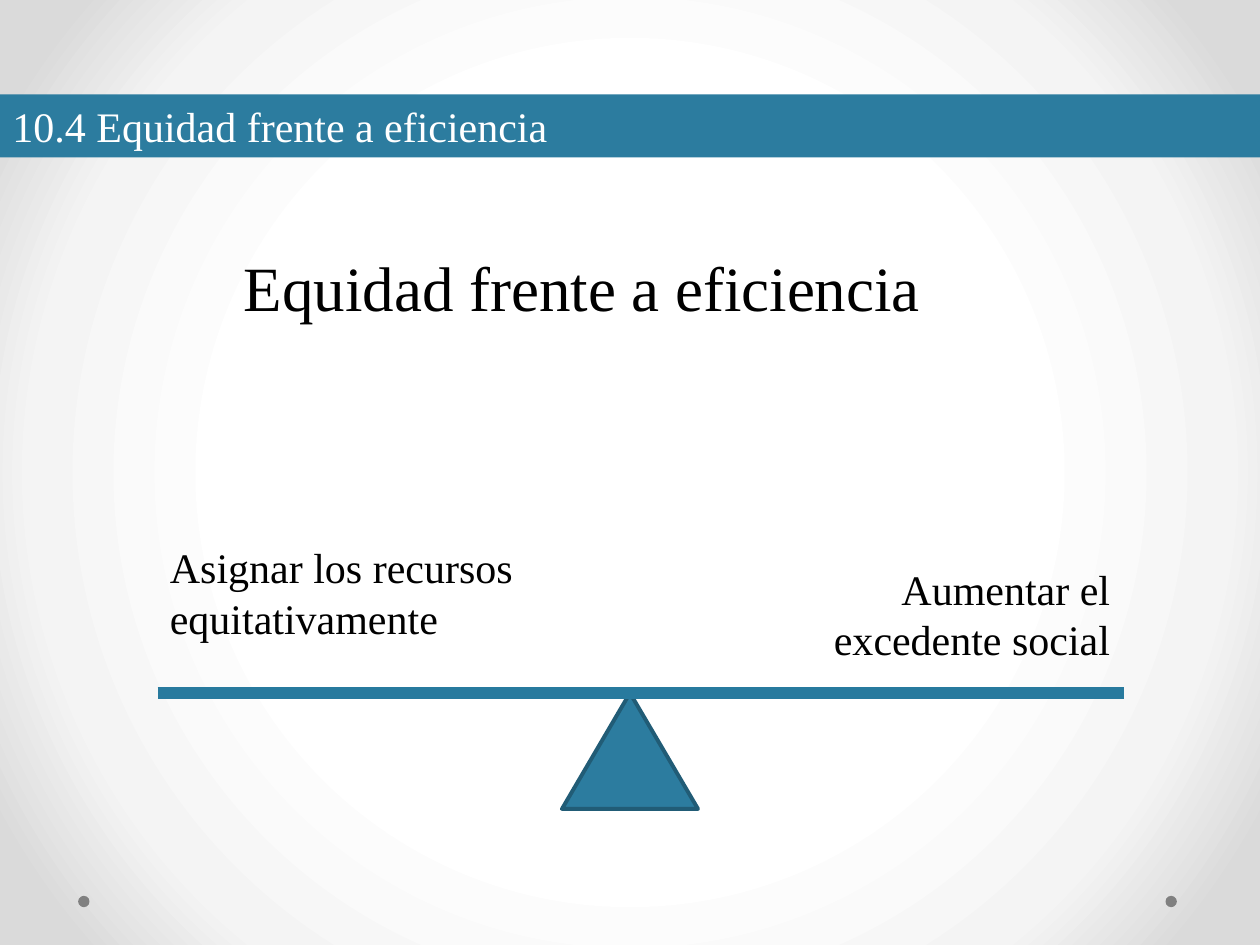
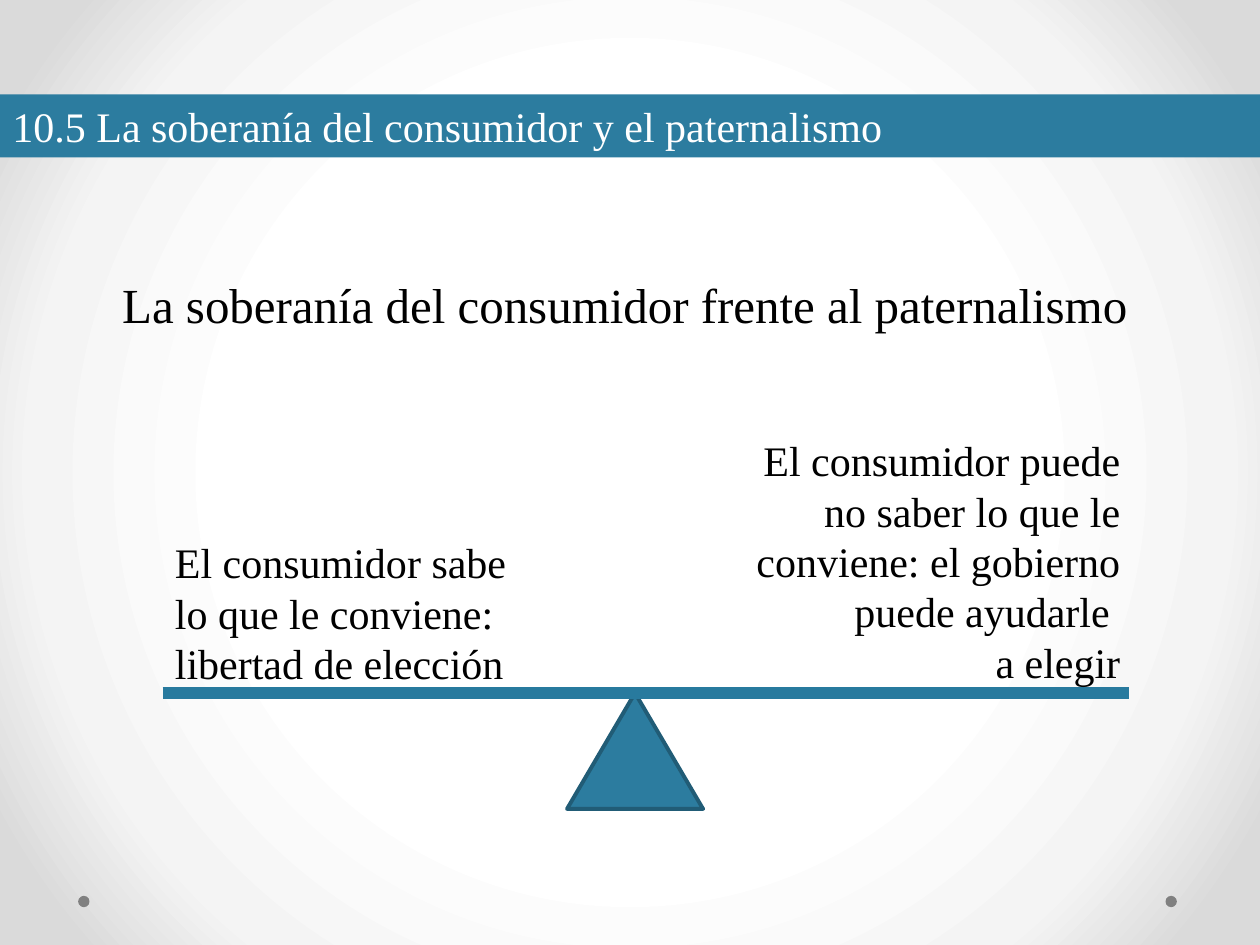
from dataclasses import dataclass

from lxml import etree
from pptx import Presentation
from pptx.dml.color import RGBColor
from pptx.enum.shapes import MSO_CONNECTOR, MSO_SHAPE
from pptx.enum.text import MSO_ANCHOR, PP_ALIGN
from pptx.oxml.ns import nsdecls, qn
from pptx.util import Inches, Pt

COLORS = {
    "band": "2C7C9F",
    "beam": "287A9E",
    "pivot_edge": "215C76",
    "dot": "808080",
    "text": "000000",
    "band_text": "FFFFFF",
}
BACKGROUND_STOPS = {50: "FFFFFF", 76: "F4F4F4", 92: "DADADA"}
FONT = "Times New Roman"
PAGE_WIDTH, PAGE_HEIGHT = 10, 7.5
BEAM_Y, BEAM_LENGTH = 5.5, 7.67
PIVOT_OFFSET, PIVOT_WIDTH, PIVOT_HEIGHT = 3.21, 1.08, 0.92
DOT_LEFTS, DOT_TOP, DOT_SIZE = (9.25, 0.62), 7.11, 0.09


@dataclass(frozen=True)
class Label:
    lines: tuple[str, ...]
    left: float
    top: float
    width: float
    height: float
    size: int = 24
    align: PP_ALIGN = PP_ALIGN.LEFT


@dataclass(frozen=True)
class BalancePage:
    section: str
    beam_left: float
    labels: tuple[Label, ...]


PAGES = (
    BalancePage("10.4 Equidad frente a eficiencia", 1.25, (
        Label(("Equidad frente a eficiencia",),
              0.33, 1.92, 8.58, 0.71, 36, PP_ALIGN.CENTER),
        Label(("Aumentar el excedente social",),
              6.08, 4.42, 2.83, 0.91, align=PP_ALIGN.RIGHT),
        Label(("Asignar los recursos equitativamente",),
              1.25, 4.25, 3, 0.91),
    )),
    BalancePage("10.5 La soberanía del consumidor y el paternalismo", 1.29, (
        Label(("La soberanía del consumidor frente al paternalismo",),
              -0.04, 2.13, 10, 0.57, 28, PP_ALIGN.CENTER),
        Label(("El consumidor puede no saber lo que le conviene: "
               "el gobierno puede ayudarle ", "a elegir"),
              5.83, 3.4, 3.16, 2.12, align=PP_ALIGN.RIGHT),
        Label(("El consumidor sabe lo que le conviene: libertad de elección",),
              1.29, 4.21, 2.83, 1.31),
    )),
)


def rgb(name: str) -> RGBColor:
    return RGBColor.from_string(COLORS[name])


def set_background(master) -> None:
    """Give every page the same radial gradient."""
    master.background.fill.solid()
    properties = master.element.find(".//" + qn("p:bgPr"))
    stops = "".join(
        f'<a:gs pos="{percent * 1000}"><a:srgbClr val="{color}"/></a:gs>'
        for percent, color in BACKGROUND_STOPS.items()
    )
    gradient = etree.fromstring(
        f'<a:gradFill {nsdecls("a")} rotWithShape="1"><a:gsLst>{stops}</a:gsLst>'
        '<a:path path="circle">'
        '<a:fillToRect l="50000" t="50000" r="50000" b="50000"/>'
        "</a:path></a:gradFill>"
    )
    properties.replace(properties.find(qn("a:solidFill")), gradient)


def add_filled(page, kind: MSO_SHAPE, left: float, top: float,
               width: float, height: float, color: str):
    shape = page.shapes.add_shape(
        kind, Inches(left), Inches(top), Inches(width), Inches(height))
    shape.shadow.inherit = False
    shape.fill.solid()
    shape.fill.fore_color.rgb = rgb(color)
    shape.line.fill.background()
    return shape


def write_text(box, label: Label, color: str) -> None:
    frame = box.text_frame
    frame.word_wrap = True
    frame.vertical_anchor = MSO_ANCHOR.TOP
    frame.text = "\n".join(label.lines)
    for para in frame.paragraphs:
        para.alignment = label.align
        for span in para.runs:
            for name, value in {"name": FONT, "size": Pt(label.size)}.items():
                setattr(span.font, name, value)
            span.font.color.rgb = rgb(color)


def add_label(page, label: Label) -> None:
    box = page.shapes.add_textbox(
        Inches(label.left), Inches(label.top),
        Inches(label.width), Inches(label.height))
    write_text(box, label, "text")


def add_frame(page, section: str) -> None:
    """Draw the corner dots and the section band."""
    for left in DOT_LEFTS:
        add_filled(page, MSO_SHAPE.OVAL, left, DOT_TOP, DOT_SIZE, DOT_SIZE, "dot")
    title = Label((section,), 0, 0.75, PAGE_WIDTH, 0.5)
    band = add_filled(page, MSO_SHAPE.RECTANGLE, title.left, title.top,
                      title.width, title.height, "band")
    write_text(band, title, "band_text")


def add_balance(page, left: float) -> None:
    pivot = add_filled(page, MSO_SHAPE.ISOSCELES_TRIANGLE, left + PIVOT_OFFSET,
                       BEAM_Y, PIVOT_WIDTH, PIVOT_HEIGHT, "band")
    beam = page.shapes.add_connector(
        MSO_CONNECTOR.STRAIGHT, Inches(left), Inches(BEAM_Y),
        Inches(left + BEAM_LENGTH), Inches(BEAM_Y))
    for shape, color, width in ((pivot, "pivot_edge", 2.25), (beam, "beam", 7.25)):
        shape.line.color.rgb = rgb(color)
        shape.line.width = Pt(width)
    etree.SubElement(beam.element.spPr, qn("a:effectLst"))


def main() -> None:
    deck = Presentation()
    deck.slide_width, deck.slide_height = Inches(PAGE_WIDTH), Inches(PAGE_HEIGHT)
    set_background(deck.slide_master)
    for content in PAGES:
        page = deck.slides.add_slide(deck.slide_layouts[6])
        add_frame(page, content.section)
        add_balance(page, content.beam_left)
        for label in content.labels:
            add_label(page, label)
    deck.save("out.pptx")


if __name__ == "__main__":
    main()
